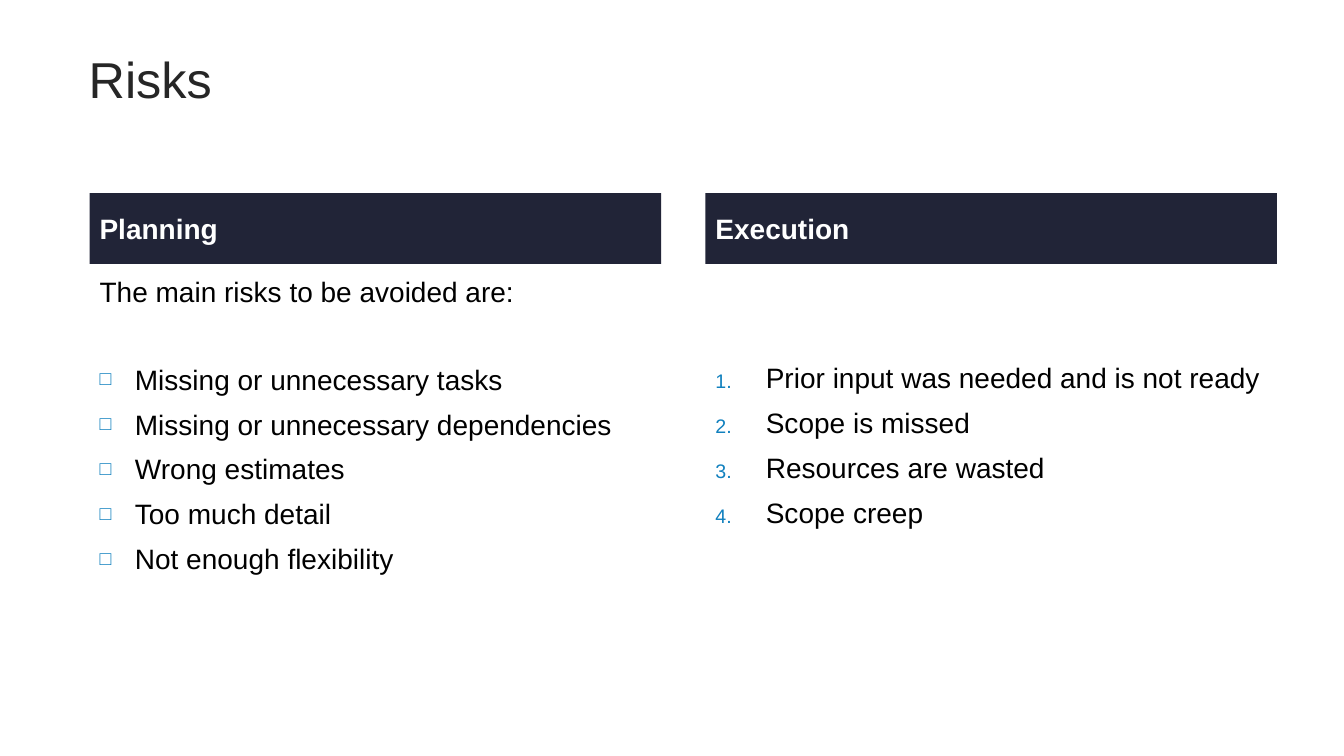
import pptx
import pptx.dml.color
import pptx.enum.shapes
import pptx.enum.text
import pptx.oxml
import pptx.oxml.ns
import pptx.util
from pptx.util import Cm

FONT = "Arial"
COLUMN_WIDTH = Cm(14.4)
LINE_PITCH = 31  # points: a 20 pt line with the space before it
SPACE_BEFORE = 8

SQUARE = '<a:buChar {ns} char="□"/>'
NUMBER = '<a:buAutoNum {ns} type="arabicPeriod"/>'


def color(hex_value):
    return pptx.dml.color.RGBColor.from_string(hex_value)


def style(paragraph, size, hex_value, bold=False):
    for run in paragraph.runs:
        run.font.name = FONT
        run.font.size = pptx.util.Pt(size)
        run.font.bold = bold
        run.font.color.rgb = color(hex_value)


def add_marker(paragraph, marker, indent):
    properties = paragraph._p.get_or_add_pPr()
    properties.set("marL", str(indent))
    properties.set("indent", str(-indent))
    parts = (
        '<a:buClr {ns}><a:srgbClr val="1080BE"/></a:buClr>',
        '<a:buSzPct {ns} val="70000"/>',
        '<a:buFont {ns} typeface="Arial"/>',
        marker,
    )
    for part in parts:
        xml = part.format(ns=pptx.oxml.ns.nsdecls("a"))
        properties.append(pptx.oxml.parse_xml(xml))


def set_title(slide, text):
    title = slide.shapes.title
    title.left, title.top, title.width, title.height = Cm(1.98), Cm(0.76), Cm(30.2), Cm(2.41)
    frame = title.text_frame
    frame.text = text
    frame.vertical_anchor = pptx.enum.text.MSO_ANCHOR.MIDDLE
    frame.paragraphs[0].alignment = pptx.enum.text.PP_ALIGN.LEFT
    style(frame.paragraphs[0], 36, "262626")


def add_heading(slide, left, text):
    heading = slide.shapes.add_shape(
        pptx.enum.shapes.MSO_SHAPE.RECTANGLE, left, Cm(4.87), COLUMN_WIDTH, Cm(1.78))
    heading.shadow.inherit = False
    heading.fill.solid()
    heading.fill.fore_color.rgb = color("212437")
    heading.line.fill.background()
    frame = heading.text_frame
    frame.text = text
    frame.vertical_anchor = pptx.enum.text.MSO_ANCHOR.MIDDLE
    frame.paragraphs[0].alignment = pptx.enum.text.PP_ALIGN.LEFT
    style(frame.paragraphs[0], 20, "FFFFFF", bold=True)


def add_risk_list(slide, left, risks, marker, indent, intro=None):
    box = slide.shapes.add_textbox(left, Cm(6.78), COLUMN_WIDTH, Cm(9.96))
    frame = box.text_frame
    frame.word_wrap = True
    lines = ([intro] if intro else []) + risks
    frame.text = "\n".join(lines)
    if not intro:
        # Align the first risk with the list that follows an introduction
        frame.margin_top += pptx.util.Pt(2 * LINE_PITCH)
    for index, paragraph in enumerate(frame.paragraphs):
        if not intro or index > 0:
            add_marker(paragraph, marker, indent)
        if index > 0:
            gap = LINE_PITCH if intro and index == 1 else 0
            paragraph.space_before = pptx.util.Pt(SPACE_BEFORE + gap)
        style(paragraph, 20, "000000")


def main():
    deck = pptx.Presentation()
    deck.slide_width, deck.slide_height = Cm(33.87), Cm(19.05)
    slide = deck.slides.add_slide(deck.slide_layouts[5])
    set_title(slide, "Risks")

    # Planning column
    planning_left = Cm(2.26)
    add_risk_list(slide, planning_left, [
        "Missing or unnecessary tasks",
        "Missing or unnecessary dependencies",
        "Wrong estimates",
        "Too much detail",
        "Not enough flexibility",
    ], SQUARE, Cm(0.89), intro="The main risks to be avoided are:")
    add_heading(slide, planning_left, "Planning")

    # Execution column
    execution_left = Cm(17.78)
    add_risk_list(slide, execution_left, [
        "Prior input was needed and is not ready",
        "Scope is missed",
        "Resources are wasted",
        "Scope creep",
    ], NUMBER, Cm(1.27))
    add_heading(slide, execution_left, "Execution")

    deck.save("out.pptx")


if __name__ == "__main__":
    main()
